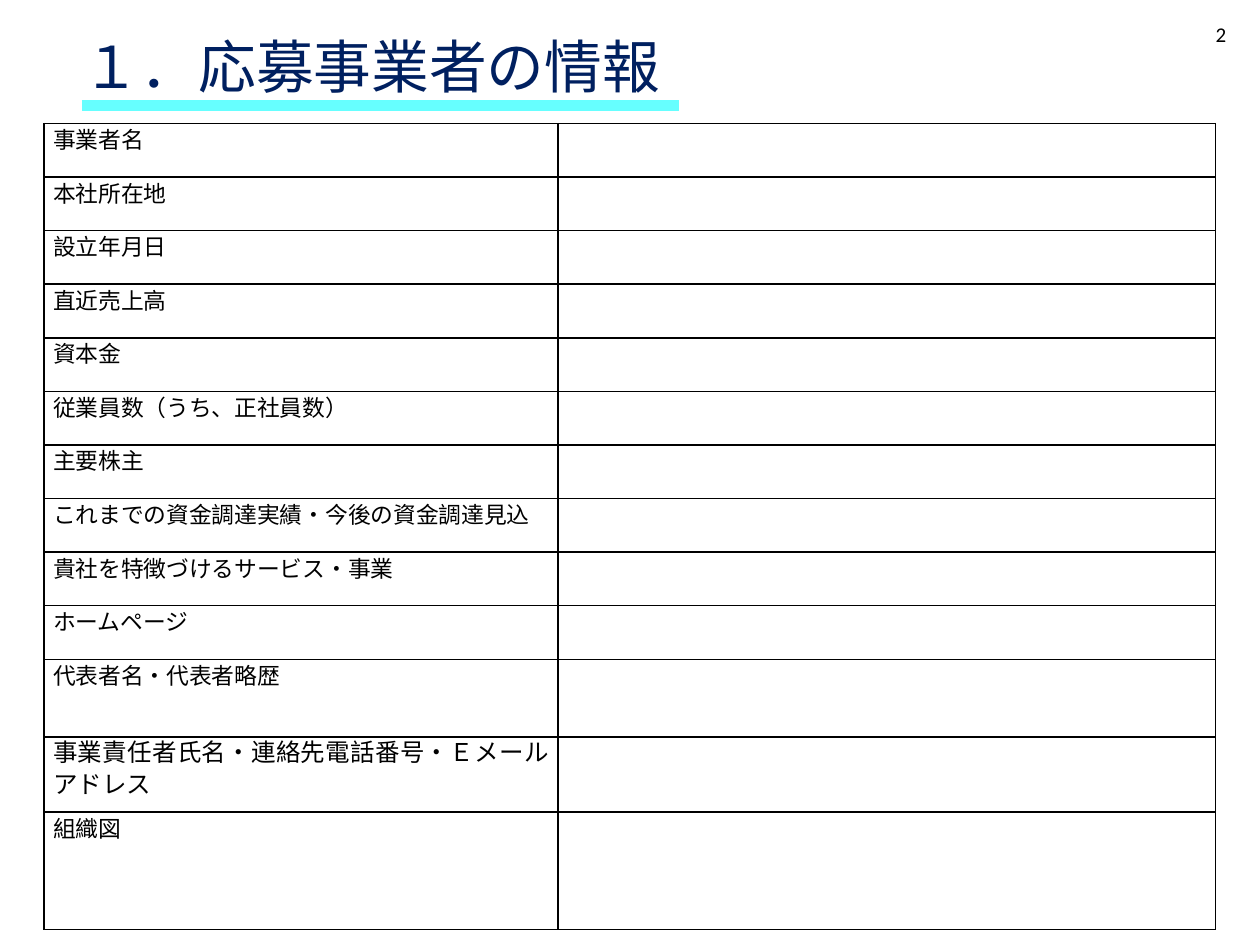
from dataclasses import dataclass

from lxml.etree import SubElement
from pptx import Presentation
from pptx.dml.color import RGBColor
from pptx.enum.shapes import MSO_CONNECTOR
from pptx.enum.text import PP_ALIGN
from pptx.oxml.ns import qn
from pptx.util import Cm, Pt


@dataclass(frozen=True)
class Theme:
    """Colours, fonts and type sizes of the slide."""
    navy: str = "002060"
    aqua: str = "66FFFF"
    black: str = "000000"
    white: str = "FFFFFF"
    latin: str = "Calibri"
    asian: str = "Noto Sans CJK JP"
    title: int = 33
    label: int = 13
    large: int = 14
    number: int = 12


class Deck:
    """Draws styled elements on the current slide."""

    def __init__(self, theme, wide, high):
        """Start a deck of the given size with one blank slide."""
        self.theme = theme
        self.file = Presentation()
        self.file.slide_width, self.file.slide_height = Cm(wide), Cm(high)
        self.slide = self.file.slides.add_slide(self.file.slide_layouts[6])

    def run(self, para, text, size, color, font):
        """Add one run with its font, size and colour."""
        run = para.add_run()
        run.text = text
        run.font.name = font
        run.font.size = Pt(size)
        run.font.color.rgb = RGBColor.from_string(color)
        SubElement(run.font._element, qn("a:ea"), typeface=self.theme.asian)

    def text(self, box, text, size, color, align=PP_ALIGN.LEFT, space=1.0):
        """Add a wrapped text box with a single paragraph."""
        frame = self.slide.shapes.add_textbox(*map(Cm, box)).text_frame
        frame.word_wrap = True
        para = frame.paragraphs[0]
        para.alignment, para.line_spacing = align, space
        self.run(para, text, size, color, self.theme.latin)

    def line(self, left, right, top, color, width):
        """Add a flat rule without shadow."""
        rule = self.slide.shapes.add_connector(
            MSO_CONNECTOR.STRAIGHT, Cm(left), Cm(top), Cm(right), Cm(top))
        rule.line.color.rgb = RGBColor.from_string(color)
        rule.line.width = Pt(width)
        SubElement(rule._element.spPr, qn("a:effectLst"))

    def cell(self, cell):
        """Give a cell its margins, border and fill."""
        cell.margin_left = cell.margin_right = Cm(0.18)
        cell.margin_top = cell.margin_bottom = 0
        props = cell._tc.get_or_add_tcPr()
        for side in ("lnL", "lnR", "lnT", "lnB"):
            edge = SubElement(props, qn(f"a:{side}"), w=str(Pt(1)))
            fill = SubElement(edge, qn("a:solidFill"))
            SubElement(fill, qn("a:srgbClr"), val=self.theme.black)
        cell.fill.solid()
        cell.fill.fore_color.rgb = RGBColor.from_string(self.theme.white)

    def form(self, left, top, widths, rows):
        """Add a form table with labels in its first column."""
        high = sum(row[1] for row in rows)
        table = self.slide.shapes.add_table(
            len(rows), len(widths), Cm(left), Cm(top),
            Cm(sum(widths)), Cm(high)).table
        table.first_row = table.horz_banding = False
        for col, width in zip(table.columns, widths):
            col.width = Cm(width)
        for row, (label, tall, size, align, hang) in zip(table.rows, rows):
            row.height = Cm(tall)
            for cell in row.cells:
                self.cell(cell)
            para = row.cells[0].text_frame.paragraphs[0]
            para.alignment, para.line_spacing = align, Pt(18)
            if hang:
                props = para._p.get_or_add_pPr()
                props.set("marL", str(Cm(0.38)))
                props.set("indent", str(-Cm(0.38)))
            self.run(para, label, size, self.theme.black, self.theme.asian)


def main():
    """Build and save the applicant form."""
    theme = Theme()
    deck = Deck(theme, 25.4, 19.05)
    deck.text((1.42, 0.66, 21.87, 2.13), "１．応募事業者の情報",
              theme.title, theme.navy, space=0.9)
    deck.line(1.65, 13.69, 2.13, theme.aqua, 6)
    deck.text((19.25, 0.3, 5.72, 1.02), "2", theme.number, theme.black,
              PP_ALIGN.RIGHT)

    left, just = PP_ALIGN.LEFT, PP_ALIGN.JUSTIFY
    low, size = 1.08, theme.label
    rows = [
        ("事業者名", low, size, left, True),
        ("本社所在地", low, size, left, True),
        ("設立年月日", low, size, just, True),
        ("直近売上高", low, size, just, True),
        ("資本金", low, size, just, True),
        ("従業員数（うち、正社員数）", low, size, just, True),
        ("主要株主", low, size, just, True),
        ("これまでの資金調達実績・今後の資金調達見込", low, size, left, False),
        ("貴社を特徴づけるサービス・事業", low, size, left, True),
        ("ホームページ", low, size, just, True),
        ("代表者名・代表者略歴", 1.57, size, just, True),
        ("事業責任者氏名・連絡先電話番号・Ｅメールアドレス", 1.51,
         theme.large, just, False),
        ("組織図", 2.37, size, just, True),
    ]
    deck.form(0.89, 2.49, (10.36, 13.25), rows)
    deck.file.save("out.pptx")


if __name__ == "__main__":
    main()
